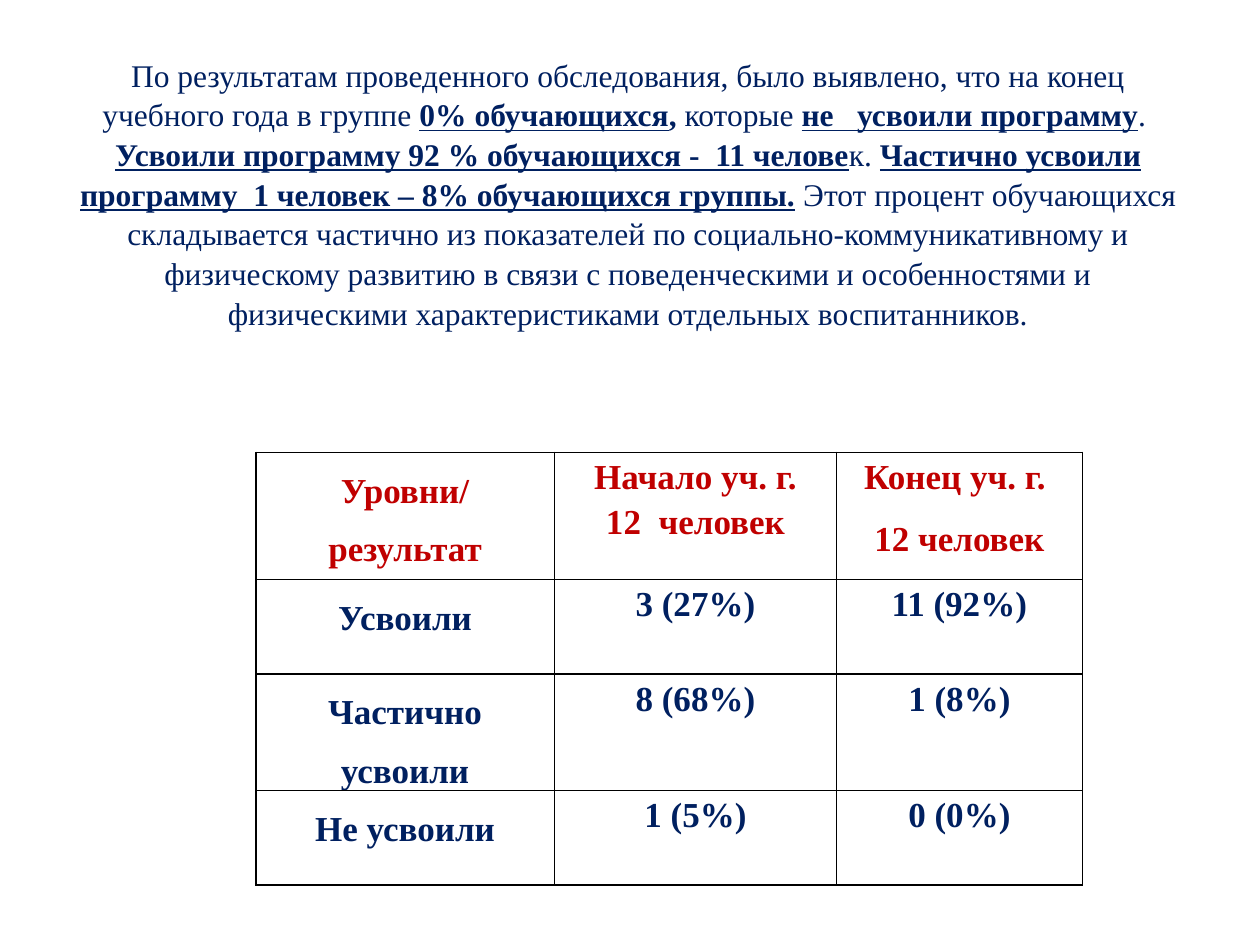
from copy import deepcopy

from lxml import etree
from pptx import Presentation
from pptx.dml.color import RGBColor
from pptx.enum.text import MSO_ANCHOR, MSO_AUTO_SIZE, PP_ALIGN
from pptx.oxml.ns import qn
from pptx.util import Inches, Pt

CENTER = PP_ALIGN.CENTER
MIDDLE = MSO_ANCHOR.MIDDLE
NO_FIT = MSO_AUTO_SIZE.NONE
NAVY = RGBColor(0x00, 0x20, 0x60)
RED = RGBColor(0xC0, 0x00, 0x00)
BLACK = RGBColor(0x00, 0x00, 0x00)
FONT = "Times New Roman"
BREAK = "\n"

# Title pieces: text and whether it is bold, underlined
TITLE = [
    ("По результатам проведенного обследования, было выявлено, что на конец "
     "учебного года в группе ", False, False),
    ("0% обучающихся", True, True),
    (", ", True, False),
    ("которые ", False, False),
    ("не   усвоили программу", True, True),
    (". ", False, False),
    (BREAK, False, False),
    ("Усвоили программу 92 % обучающихся -  11 челове", True, True),
    ("к. ", False, False),
    ("Частично усвоили программу  1 человек – 8% обучающихся группы.", True, True),
    (" ", True, False),
    ("Этот процент обучающихся складывается частично из показателей по "
     "социально-коммуникативному и физическому развитию в связи с "
     "поведенческими и особенностями и физическими характеристиками "
     "отдельных воспитанников.", False, False),
    (BREAK, False, False),
]

# Each cell is a list of paragraphs
ROWS = [
    [["Уровни/\nрезультат"], ["Начало уч. г.", "12  человек"],
     ["Конец уч. г. ", "12 человек"]],
    [["Усвоили"], ["3 (27%)"], ["11 (92%)"]],
    [["Частично усвоили"], ["8 (68%)"], ["1 (8%)"]],
    [["Не усвоили"], ["1 (5%)"], ["0 (0%)"]],
]
WIDTHS = [2.37, 2.24, 1.95]
HEIGHTS = [1.01, 0.75, 0.75, 0.75]


def apply(obj, **values):
    for name, value in values.items():
        setattr(obj, name, value)


class Page:
    def __init__(self, deck):
        self.slide = deck.slides.add_slide(deck.slide_layouts[5])

    def fill_text(self, para, pieces, size, color):
        for text, bold, line in pieces:
            if text == BREAK:
                para.add_line_break()
                continue
            run = para.add_run()
            run.text = text
            apply(run.font, name=FONT, size=Pt(size), bold=bold, underline=line)
            run.font.color.rgb = color
        # Breaks and the paragraph end keep the size of the first run
        style = para.runs[0]._r.find(qn("a:rPr"))
        for mark in para._p.findall(qn("a:br")):
            mark.append(deepcopy(style))
        end = etree.SubElement(para._p, qn("a:endParaRPr"))
        end.set("sz", str(size * 100))

    def title(self, box, pieces):
        shape = self.slide.shapes.title
        left, top, width, height = map(Inches, box)
        apply(shape, left=left, top=top, width=width, height=height)
        frame = shape.text_frame
        apply(frame, word_wrap=True, auto_size=NO_FIT, vertical_anchor=MIDDLE)
        para = frame.paragraphs[0]
        apply(para, alignment=CENTER, line_spacing=1.05)
        self.fill_text(para, pieces, 18, NAVY)

    def border(self, cell):
        props = cell._tc.get_or_add_tcPr()
        for side in ("lnL", "lnR", "lnT", "lnB"):
            line = etree.SubElement(props, qn(f"a:{side}"), w=str(int(Pt(1))))
            fill = etree.SubElement(line, qn("a:solidFill"))
            etree.SubElement(fill, qn("a:srgbClr"), val=str(BLACK))

    def cell(self, cell, texts, color, spacing, after):
        self.border(cell)
        cell.fill.background()
        apply(cell, margin_left=Inches(0.07), margin_right=Inches(0.07),
              margin_top=0, margin_bottom=0)
        frame = cell.text_frame
        for i, text in enumerate(texts):
            para = frame.add_paragraph() if i else frame.paragraphs[0]
            apply(para, alignment=CENTER, line_spacing=spacing, space_after=Pt(after))
            pieces = [(part, True, False) for part in text.split(BREAK)]
            if len(pieces) > 1:
                pieces.insert(1, (BREAK, True, False))
                # The first line of the corner label sits to the left
                props = para._p.get_or_add_pPr()
                props.set("marL", "0")
                props.set("indent", str(int(-Inches(0.5))))
            self.fill_text(para, pieces, 20, color)

    def table(self, left, top, rows):
        frame = self.slide.shapes.add_table(
            len(rows), len(WIDTHS), Inches(left), Inches(top),
            Inches(sum(WIDTHS)), Inches(sum(HEIGHTS)))
        grid = frame.table
        apply(grid, first_row=False, horz_banding=False)
        for col, width in zip(grid.columns, WIDTHS):
            col.width = Inches(width)
        for row, height in zip(grid.rows, HEIGHTS):
            row.height = Inches(height)
        for r, row in enumerate(rows):
            for c, texts in enumerate(row):
                self.cell(grid.cell(r, c), texts,
                          color=NAVY if r else RED,
                          spacing=1.15 if c else 1.5,
                          after=10 if (r, c) == (0, 2) else 0)


def main():
    deck = Presentation()
    apply(deck, slide_width=Inches(10), slide_height=Inches(7.5))
    page = Page(deck)
    # Results table
    page.table(2.03, 3.59, ROWS)
    # Summary text
    page.title((0.47, 0.39, 9.03, 2.58), TITLE)
    deck.save("out.pptx")


if __name__ == "__main__":
    main()
